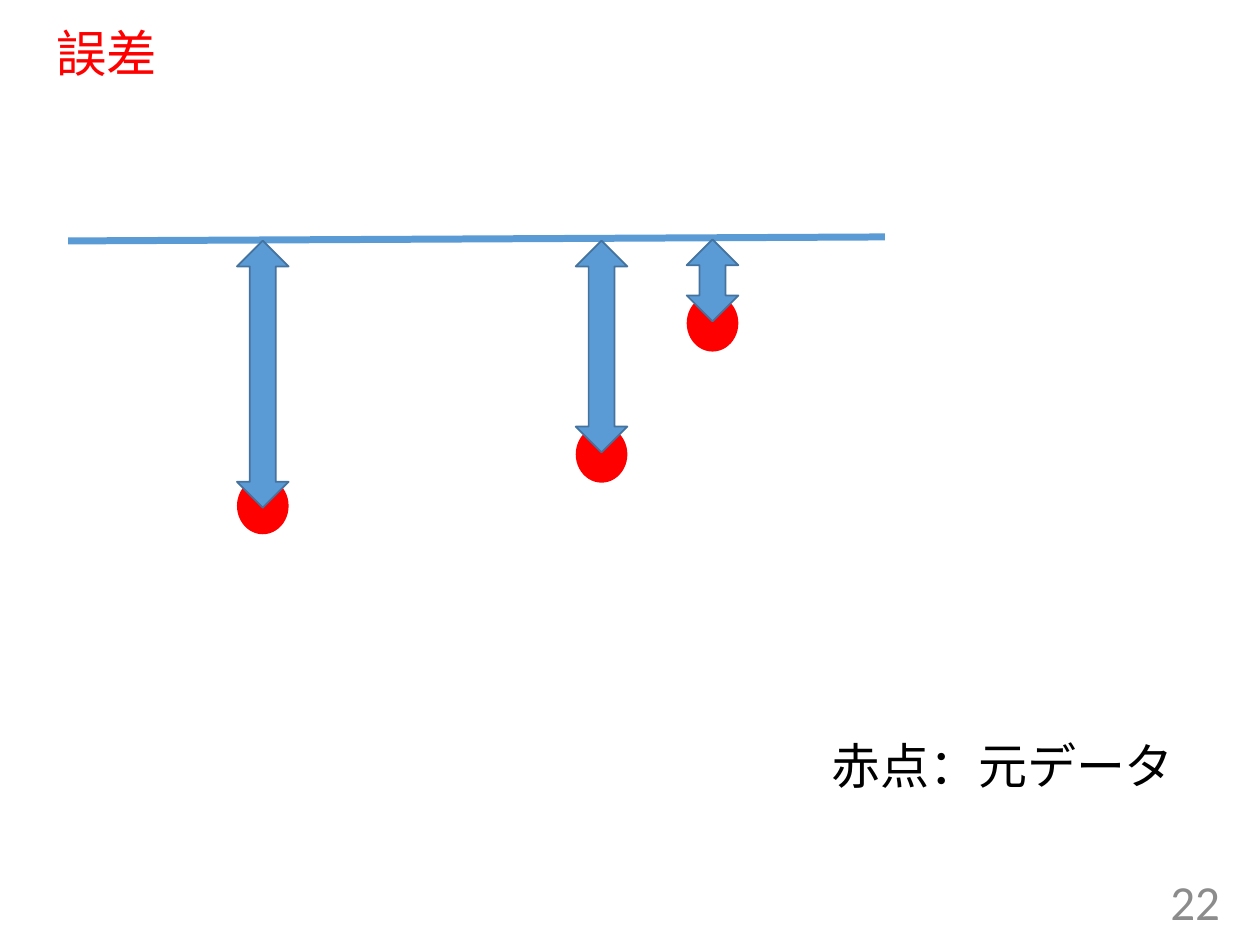
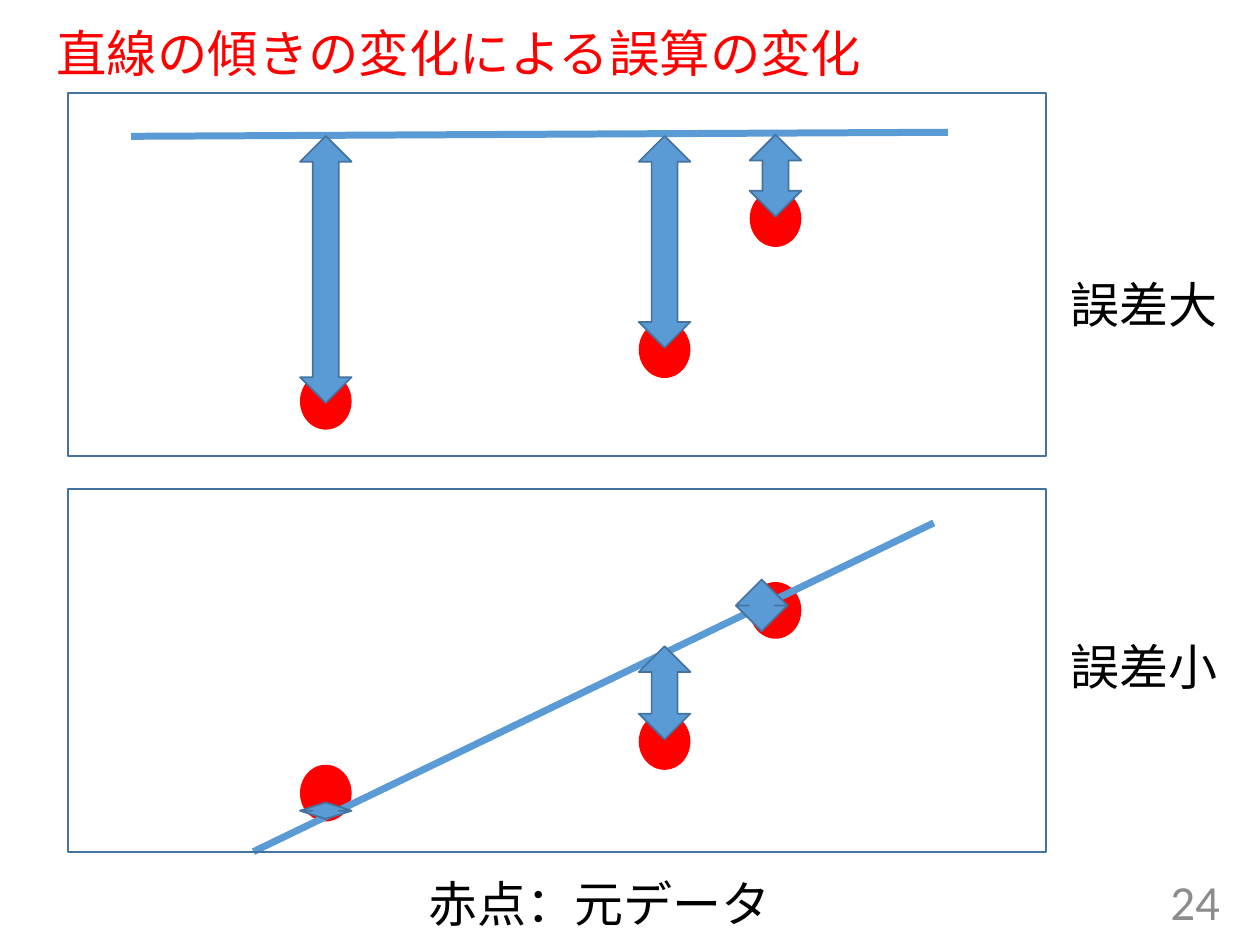
from lxml import etree
from pptx import Presentation
from pptx.dml.color import RGBColor
from pptx.enum import shapes, text
from pptx.oxml.ns import qn
from pptx.util import Pt

RED = RGBColor(0xFF, 0x00, 0x00)
BLUE = RGBColor(0x5B, 0x9B, 0xD5)
EDGE = RGBColor(0x43, 0x73, 0x9E)
BLACK = RGBColor(0x00, 0x00, 0x00)
GREY = RGBColor(0x8C, 0x8C, 0x8C)

# Plot parts are measured from the corner of the first dot
DOT_W, DOT_H = 29.5, 32.4
DOTS = [(0, 0), (193.6, -29.5), (257, -104.4)]
FLAT = {
    "line": ((-96.5, -135.2), (370.3, -137.5)),
    "errors": [(257, -136.1, 46.8), (193.6, -135.4, 121), (0, -135.4, 152.6)],
}
STEEP = {
    "line": ((-26.6, 49.7), (362.2, -138.2)),
    "errors": [(249.1, -105.8, 29.5), (193.6, -67.7, 53.3), (0, 21.6, 9.4)],
}

LEGEND = "赤点：元データ"
FRAME_X, FRAME_W, FRAME_H = 38.9, 558.7, 207.4
LABEL_X, LABEL_W, LABEL_H = 604.8, 99.4, 41
LEGEND_W = 212.4

SLIDES = [
    {"title": "誤差", "number": "22", "legend": (468, 416.9),
     "plots": [(135.4, 272.9, FLAT)], "frames": [], "labels": []},
    {"title": "直線の傾きの変化による誤算の変化", "number": "24", "legend": (237.6, 495.4),
     "plots": [(171.4, 213.1, FLAT), (171.4, 437, STEEP)],
     "frames": [53.3, 279.4],
     "labels": [("誤差大", 153.4), ("誤差小", 360)]},
]


def add_text(s, content, x, y, w, h, size=28, color=BLACK, wrap=False, frame=None, para=None):
    tf = s.shapes.add_textbox(Pt(x), Pt(y), Pt(w), Pt(h)).text_frame
    tf.word_wrap = wrap
    for name, value in (frame or {}).items():
        setattr(tf, name, value)
    p = tf.paragraphs[0]
    for name, value in (para or {}).items():
        setattr(p, name, value)
    r = p.add_run()
    r.text = content
    for name, value in {"name": "Calibri", "size": Pt(size)}.items():
        setattr(r.font, name, value)
    r.font.color.rgb = color


def add_shape(s, kind, x, y, w, h, fill=None, edge=None):
    sp = s.shapes.add_shape(kind, Pt(x), Pt(y), Pt(w), Pt(h))
    sp.shadow.inherit = False
    if fill is None:
        sp.fill.background()
    else:
        sp.fill.solid()
        sp.fill.fore_color.rgb = fill
    if edge is None:
        sp.line.fill.background()
    else:
        sp.line.color.rgb = edge
        sp.line.width = Pt(1)


def add_plot(s, x, y, plot):
    """Draw the dots, the fitted line and the error arrows between them."""
    for dx, dy in DOTS:
        add_shape(s, shapes.MSO_SHAPE.OVAL, x + dx, y + dy, DOT_W, DOT_H, RED)
    (x1, y1), (x2, y2) = plot["line"]
    line = s.shapes.add_connector(shapes.MSO_CONNECTOR.STRAIGHT,
                                  Pt(x + x1), Pt(y + y1), Pt(x + x2), Pt(y + y2))
    line.line.color.rgb = BLUE
    line.line.width = Pt(4)
    etree.SubElement(line._element.spPr, qn("a:effectLst"))
    for dx, dy, h in plot["errors"]:
        add_shape(s, shapes.MSO_SHAPE.UP_DOWN_ARROW, x + dx, y + dy, DOT_W, h, BLUE, EDGE)


def add_slide(prs, content):
    s = prs.slides.add_slide(prs.slide_layouts[6])
    middle = {"vertical_anchor": text.MSO_ANCHOR.MIDDLE}
    grow = {"auto_size": text.MSO_AUTO_SIZE.SHAPE_TO_FIT_TEXT}
    add_text(s, content["title"], 25.2, 13.7, 666, 36.7, 28.8, RED, True,
             middle, {"line_spacing": 0.9})
    add_text(s, content["number"], 542.2, 500.4, 162, 28.8, 28, GREY, True,
             middle, {"alignment": text.PP_ALIGN.RIGHT})
    add_text(s, LEGEND, *content["legend"], LEGEND_W, LABEL_H, frame=grow)
    for x, y, plot in content["plots"]:
        add_plot(s, x, y, plot)
    for y in content["frames"]:
        add_shape(s, shapes.MSO_SHAPE.RECTANGLE, FRAME_X, y, FRAME_W, FRAME_H, edge=EDGE)
    for label, y in content["labels"]:
        add_text(s, label, LABEL_X, y, LABEL_W, LABEL_H, frame=grow)


def main():
    prs = Presentation()
    prs.slide_width, prs.slide_height = Pt(720), Pt(540)
    for content in SLIDES:
        add_slide(prs, content)
    prs.save("out.pptx")


if __name__ == "__main__":
    main()
